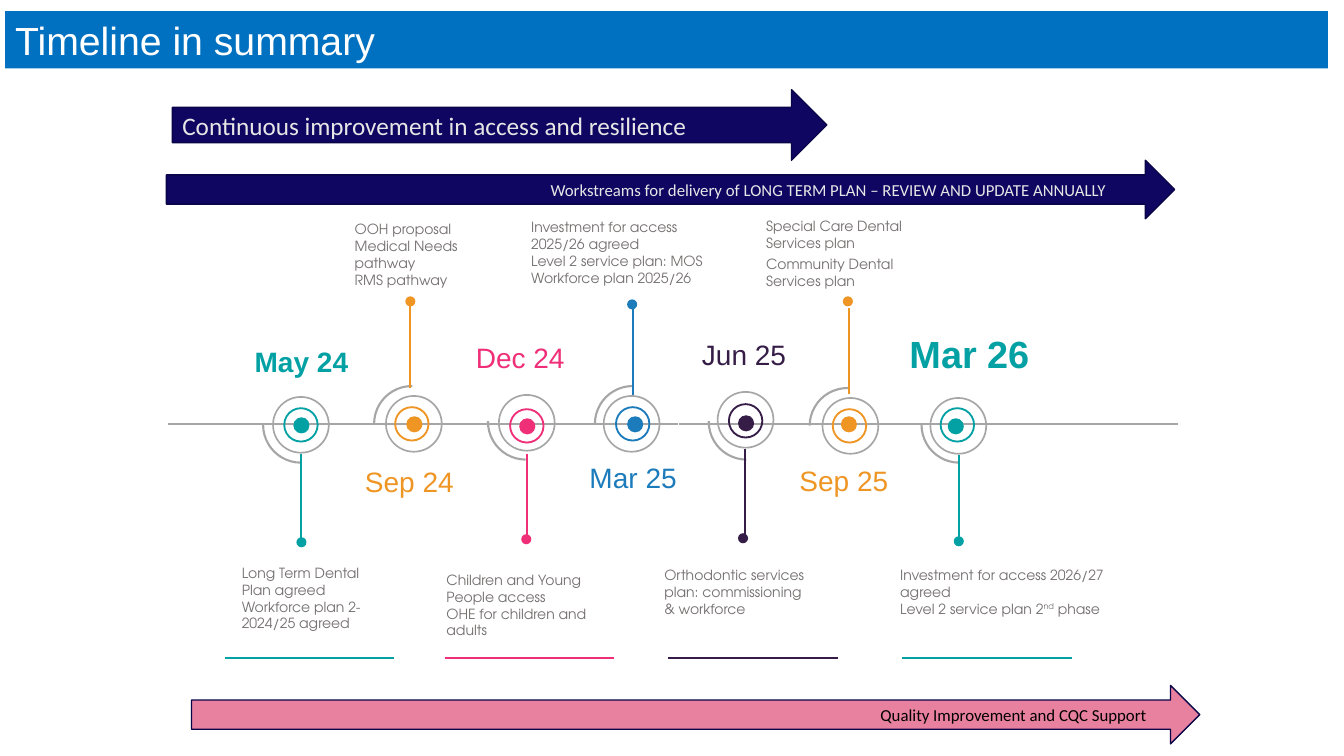
"""Build the dental services timeline slide."""
from dataclasses import dataclass
from typing import NamedTuple

from lxml.etree import SubElement
from pptx import Presentation
from pptx.dml.color import RGBColor
from pptx.enum.shapes import MSO_CONNECTOR as Connector, MSO_SHAPE as Preset
from pptx.enum.text import MSO_ANCHOR as Anchor, MSO_AUTO_SIZE as AutoSize, PP_ALIGN as Align
from pptx.oxml.ns import qn
from pptx.util import Emu, Pt


@dataclass(frozen=True)
class Theme:
    white: str = "FFFFFF"
    black: str = "000000"
    banner: str = "0070C0"
    navy: str = "0E0661"
    navy_edge: str = "0A0448"
    rose: str = "E8819F"
    pale: str = "E7E6E6"
    grey: str = "A6A6A6"
    note: str = "767171"
    teal: str = "03A1A4"
    orange: str = "EE9524"
    pink: str = "EF3078"
    blue: str = "1C7CBB"
    purple: str = "361D47"
    heading_font: str = "Arial"
    arrow_font: str = "Calibri"
    note_font: str = "TeX Gyre Adventor"
    title_size: int = 28
    final_size: int = 27
    date_size: int = 20
    lead_size: int = 18
    arrow_size: int = 12
    note_size: int = 10
    line_width: float = 1.5


class Milestone(NamedTuple):
    date: str
    color: str
    upward: bool
    label: tuple
    arc: tuple
    dot: tuple
    inner: tuple
    outer: tuple
    stem: tuple
    tip: tuple
    size: int = 20
    bold: bool = False


THEME = Theme()
PX = 9144
SLIDE_SIZE = (1333, 750)
TITLE = "Timeline in summary"
TITLE_BOX = (5, 11, 1312, 57)

AXIS_Y = 421
AXIS_SEGMENTS = [(167, 293), (303, 487), (487, 672), (673, 858), (857, 1041), (1041, 1168)]
STEM_LENGTH = 85
ARC_SIZE, OUTER_SIZE, INNER_SIZE, DOT_SIZE, TIP_SIZE = 75, 57, 35, 16, 10
ARC_ANGLES = (54.2, 108.53)

MILESTONES = [
    Milestone("May 24", THEME.teal, False, (237, 337, 124, 44), (261, 384), (291, 414),
              (281, 404), (270, 393), (299, 450), (294, 533), bold=True),
    Milestone("Sep 24", THEME.orange, True, (344, 456, 124, 44), (371, 383), (403, 413),
              (391, 403), (382, 392), (407, 385), (402, 294)),
    Milestone("Dec 24", THEME.pink, False, (454, 333, 124, 44), (484, 381), (515, 415),
              (505, 405), (494, 391), (523, 450), (517, 530)),
    Milestone("Mar 25", THEME.blue, True, (566, 452, 124, 44), (590, 383), (622, 413),
              (610, 403), (598, 392), (628, 392), (622, 297)),
    Milestone("Jun 25", THEME.purple, False, (676, 330, 124, 44), (703, 381), (732, 412),
              (722, 400), (711, 388), (739, 445), (732, 529)),
    Milestone("Sep 25", THEME.orange, True, (775, 455, 124, 44), (803, 385), (834, 413),
              (825, 405), (815, 394), (842, 391), (836, 294)),
    Milestone("Mar 26", THEME.teal, False, (880, 323, 163, 56), (914, 384), (940, 415),
              (932, 404), (922, 394), (951, 451), (946, 532), THEME.final_size, True),
]

NOTES = [
    ((230, 555, 150, 77), ["Long Term Dental Plan agreed", "Workforce plan 2-2024/25 agreed"]),
    ((342, 214, 154, 77), ["OOH proposal", "Medical Needs pathway", "RMS pathway"]),
    ((433, 562, 168, 77), ["Children and Young People access", "OHE for children and adults"]),
    ((517, 212, 204, 77), ["Investment for access 2025/26 agreed", "Level 2 service plan: MOS",
                           "Workforce plan 2025/26"]),
    ((649, 557, 168, 61), ["Orthodontic services plan: commissioning & workforce"]),
    ((750, 211, 169, 44), ["Special Care Dental Services plan"]),
    ((750, 249, 169, 44), ["Community Dental Services plan"]),
    ((883, 557, 240, 61), ["Investment for access 2026/27 agreed",
                           ("Level 2 service plan 2", "nd", " phase")]),
]

UNDERLINE_Y, UNDERLINE_WIDTH = 653, 168
UNDERLINES = [(223, THEME.teal), (441, THEME.pink), (663, THEME.purple), (895, THEME.teal)]

ARROWS = [
    ("Workstreams for delivery of LONG TERM PLAN – REVIEW AND UPDATE ANNUALLY",
     (165, 159, 1000, 58), THEME.navy, THEME.pale, THEME.arrow_size, Align.RIGHT, 53),
    ("Continuous improvement in access and resilience",
     (171, 89, 649, 70), THEME.navy, THEME.pale, THEME.lead_size, Align.LEFT, 10),
    ("Quality Improvement and CQC Support",
     (190, 680, 1000, 58), THEME.rose, THEME.black, THEME.arrow_size, Align.RIGHT, 38),
]


def px(*lengths):
    return [Emu(length * PX) for length in lengths]


def rgb(color):
    return RGBColor.from_string(color)


def write(shape, paragraphs, *, size, font, color, bold=False, align=Align.LEFT,
          anchor=Anchor.TOP, right_inset=10):
    frame = shape.text_frame
    frame.auto_size = AutoSize.NONE
    frame.word_wrap = True
    frame.vertical_anchor = anchor
    frame.margin_left, frame.margin_right, frame.margin_top, frame.margin_bottom = px(
        10, right_inset, 5, 5)
    for index, content in enumerate(paragraphs):
        paragraph = frame.paragraphs[0] if index == 0 else frame.add_paragraph()
        paragraph.alignment = align
        parts = (content,) if isinstance(content, str) else content
        for position, text in enumerate(parts):
            run = paragraph.add_run()
            run.text = text
            run.font.size = Pt(size)
            run.font.name = font
            run.font.bold = bold
            run.font.color.rgb = rgb(color)
            if position == 1:
                run._r.get_or_add_rPr().set("baseline", "30000")


def add_line(slide, start, end, color):
    connector = slide.shapes.add_connector(Connector.STRAIGHT, *px(*start, *end))
    connector.line.color.rgb = rgb(color)
    connector.line.width = Pt(THEME.line_width)
    SubElement(connector._element.spPr, qn("a:effectLst"))


def add_preset(slide, preset, box, *, fill=None, line=None, width=THEME.line_width,
               adjustments=()):
    shape = slide.shapes.add_shape(preset, *px(*box))
    shape.shadow.inherit = False
    for index, value in enumerate(adjustments):
        shape.adjustments[index] = value
    if fill:
        shape.fill.solid()
        shape.fill.fore_color.rgb = rgb(fill)
    else:
        shape.fill.background()
    if line:
        shape.line.color.rgb = rgb(line)
        shape.line.width = Pt(width)
    else:
        shape.line.fill.background()
    return shape


def add_milestone(slide, milestone):
    color = milestone.color
    arc = add_preset(slide, Preset.ARC, (*milestone.arc, ARC_SIZE, ARC_SIZE),
                     line=THEME.grey, adjustments=ARC_ANGLES)
    arc.rotation = 90 if milestone.upward else 0
    for preset, corner, size, fill, adjustments in [
        (Preset.OVAL, milestone.dot, DOT_SIZE, color, ()),
        (Preset.DONUT, milestone.inner, INNER_SIZE, color, (0.053,)),
        (Preset.DONUT, milestone.outer, OUTER_SIZE, THEME.grey, (0.029,)),
        (Preset.OVAL, milestone.tip, TIP_SIZE, color, ()),
    ]:
        add_preset(slide, preset, (*corner, size, size), fill=fill, adjustments=adjustments)
    x, y = milestone.stem
    reach = -STEM_LENGTH if milestone.upward else STEM_LENGTH
    add_line(slide, (x, y), (x, y + reach), color)
    write(slide.shapes.add_textbox(*px(*milestone.label)), [milestone.date],
          size=milestone.size, font=THEME.heading_font, color=color,
          bold=milestone.bold, align=Align.CENTER)


def main():
    presentation = Presentation()
    presentation.slide_width, presentation.slide_height = px(*SLIDE_SIZE)
    slide = presentation.slides.add_slide(presentation.slide_layouts[5])

    title = slide.shapes.title
    title.left, title.top, title.width, title.height = px(*TITLE_BOX)
    title.fill.solid()
    title.fill.fore_color.rgb = rgb(THEME.banner)
    write(title, [TITLE], size=THEME.title_size, font=THEME.heading_font,
          color=THEME.white, anchor=Anchor.MIDDLE)

    for start, end in AXIS_SEGMENTS:
        add_line(slide, (start, AXIS_Y), (end, AXIS_Y), THEME.grey)
    for milestone in MILESTONES:
        add_milestone(slide, milestone)
    for left, color in UNDERLINES:
        add_line(slide, (left, UNDERLINE_Y), (left + UNDERLINE_WIDTH, UNDERLINE_Y), color)
    for box, paragraphs in NOTES:
        write(slide.shapes.add_textbox(*px(*box)), paragraphs, size=THEME.note_size,
              font=THEME.note_font, color=THEME.note)
    for text, box, fill, color, size, align, inset in ARROWS:
        arrow = add_preset(slide, Preset.RIGHT_ARROW, box, fill=fill,
                           line=THEME.navy_edge, width=1)
        write(arrow, [text], size=size, font=THEME.arrow_font, color=color,
              align=align, anchor=Anchor.MIDDLE, right_inset=inset)

    presentation.save("out.pptx")


if __name__ == "__main__":
    main()
